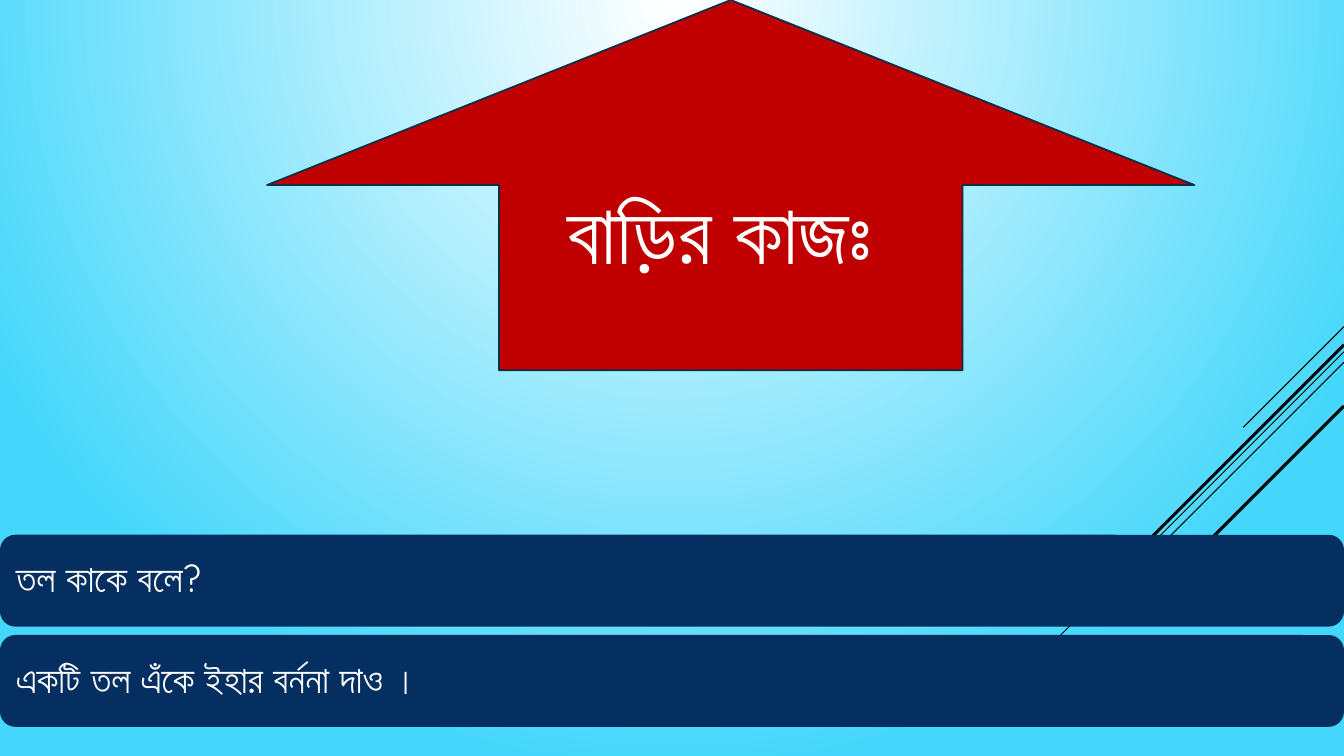
from lxml.etree import SubElement
from pptx import Presentation
from pptx.dml.color import RGBColor
from pptx.enum.shapes import MSO_CONNECTOR as CONNECTOR, MSO_SHAPE as SHAPE
from pptx.enum.text import MSO_ANCHOR as ANCHOR, PP_ALIGN as ALIGN
from pptx.oxml.ns import qn
from pptx.util import Pt

WHITE = RGBColor(0xFF, 0xFF, 0xFF)
BLACK = RGBColor(0, 0, 0)
SKY = RGBColor(0x45, 0xD7, 0xFB)
RED = RGBColor(0xC0, 0, 0)
OUTLINE = RGBColor(0x04, 0x31, 0x48)
NAVY = RGBColor(0x05, 0x2F, 0x61)
FONT = "Quicksand"
WIDTH, HEIGHT = 960, 540


def write(shape, text, size, align, line_spacing=1.0):
    frame = shape.text_frame
    frame.word_wrap = True
    frame.vertical_anchor = ANCHOR.MIDDLE
    paragraph = frame.paragraphs[0]
    paragraph.alignment = align
    paragraph.line_spacing = line_spacing
    run = paragraph.add_run()
    run.text = text
    run.font.size = Pt(size)
    run.font.name = FONT
    run.font.color.rgb = WHITE
    # Bengali is set in the complex-script font
    SubElement(run._r.get_or_add_rPr(), qn("a:cs"), typeface=FONT)


presentation = Presentation()
presentation.slide_width = Pt(WIDTH)
presentation.slide_height = Pt(HEIGHT)
slide = presentation.slides.add_slide(presentation.slide_layouts[6])

# Background: radial gradient centred on the top edge
background = slide.background.fill
background.gradient()
for stop, color in zip(background.gradient_stops, (WHITE, SKY)):
    stop.color.rgb = color
gradient = slide.element.find(".//" + qn("a:gradFill"))
gradient.remove(gradient.find(qn("a:lin")))
circle = SubElement(gradient, qn("a:path"), {"path": "circle"})
SubElement(circle, qn("a:fillToRect"), l="0", t="0", r="0", b="100000")

# Diagonal lines at 45 degrees from the right edge: top, run, weight
for top, length, weight in (
    (233.3, 72, 0.75),
    (251.3, 234.7, 0.75),
    (258.7, 149.2, 0.75),
    (246.3, 137.5, 2.25),
    (290, 100.2, 2.25),
):
    diagonal = slide.shapes.add_connector(
        CONNECTOR.STRAIGHT, Pt(WIDTH), Pt(top), Pt(WIDTH - length), Pt(top + length)
    )
    diagonal.line.color.rgb = BLACK
    diagonal.line.width = Pt(weight)
    SubElement(diagonal._element.spPr, qn("a:effectLst"))

# Title arrow
arrow = slide.shapes.add_shape(SHAPE.UP_ARROW, Pt(190.8), Pt(0), Pt(662.4), Pt(264.4))
arrow.shadow.inherit = False
arrow.fill.solid()
arrow.fill.fore_color.rgb = RED
arrow.line.color.rgb = OUTLINE
arrow.line.width = Pt(1.25)
write(arrow, "বাড়ির কাজঃ ", 60, ALIGN.CENTER)

# Homework questions
for row, question in enumerate(("তল কাকে বলে?", "একটি তল এঁকে ইহার বর্ননা দাও ।")):
    bar = slide.shapes.add_shape(
        SHAPE.ROUNDED_RECTANGLE, Pt(0), Pt(382 + 71.6 * row), Pt(WIDTH), Pt(65.6)
    )
    bar.shadow.inherit = False
    bar.fill.solid()
    bar.fill.fore_color.rgb = NAVY
    bar.line.fill.background()
    frame = bar.text_frame
    frame.margin_left = frame.margin_right = Pt(8.1)
    frame.margin_top = frame.margin_bottom = Pt(8.1)
    write(bar, question, 27, ALIGN.LEFT, line_spacing=0.9)

presentation.save("out.pptx")
